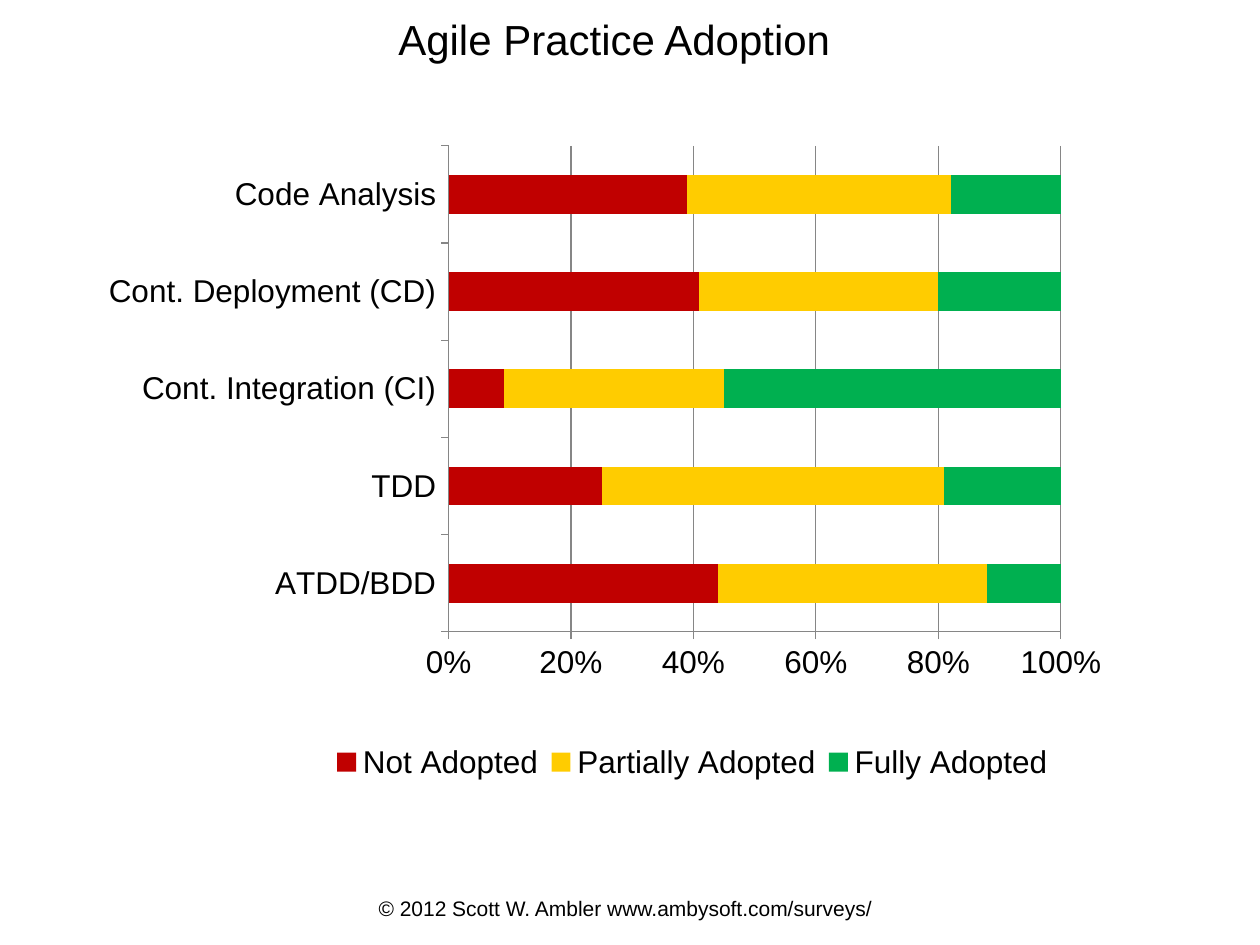
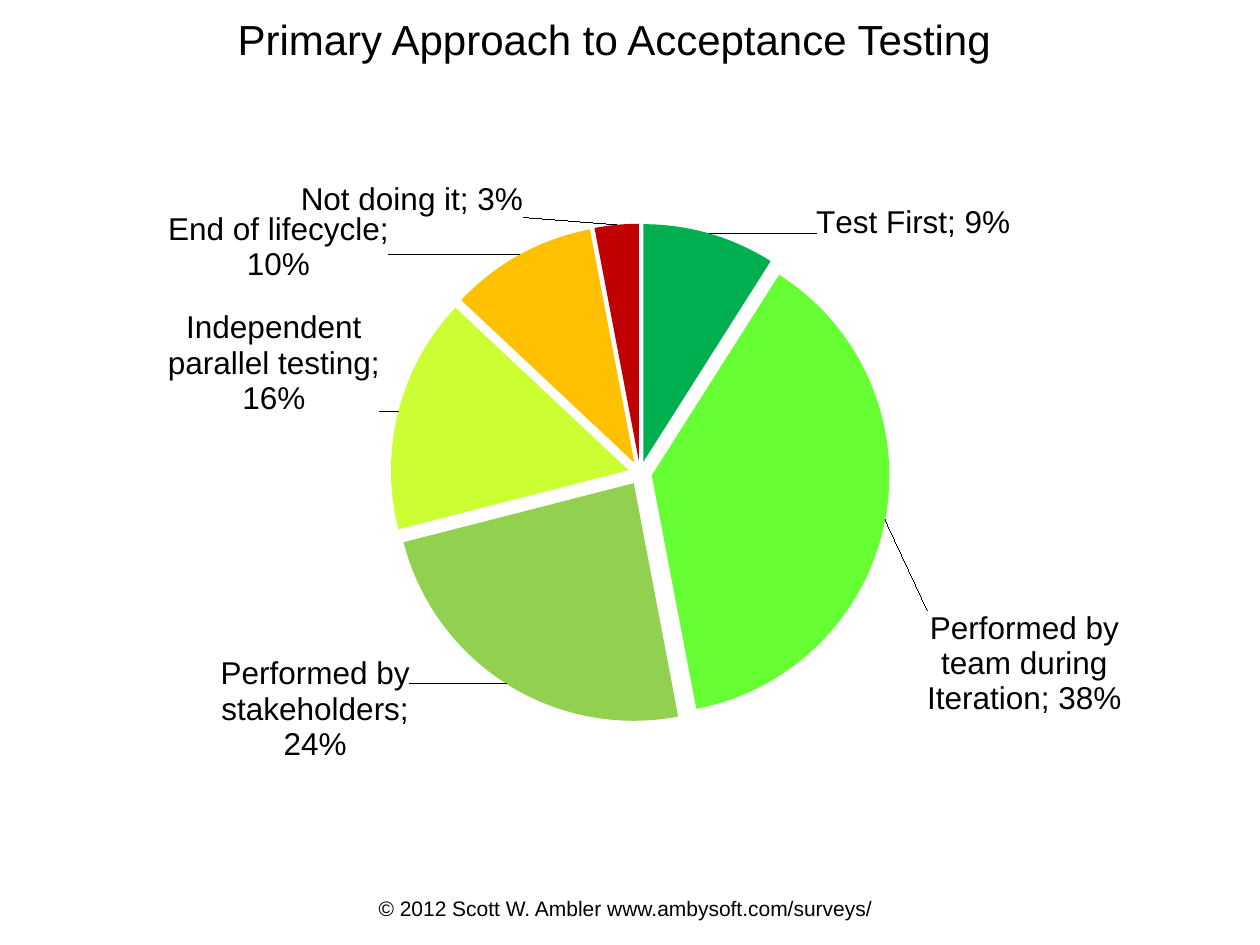
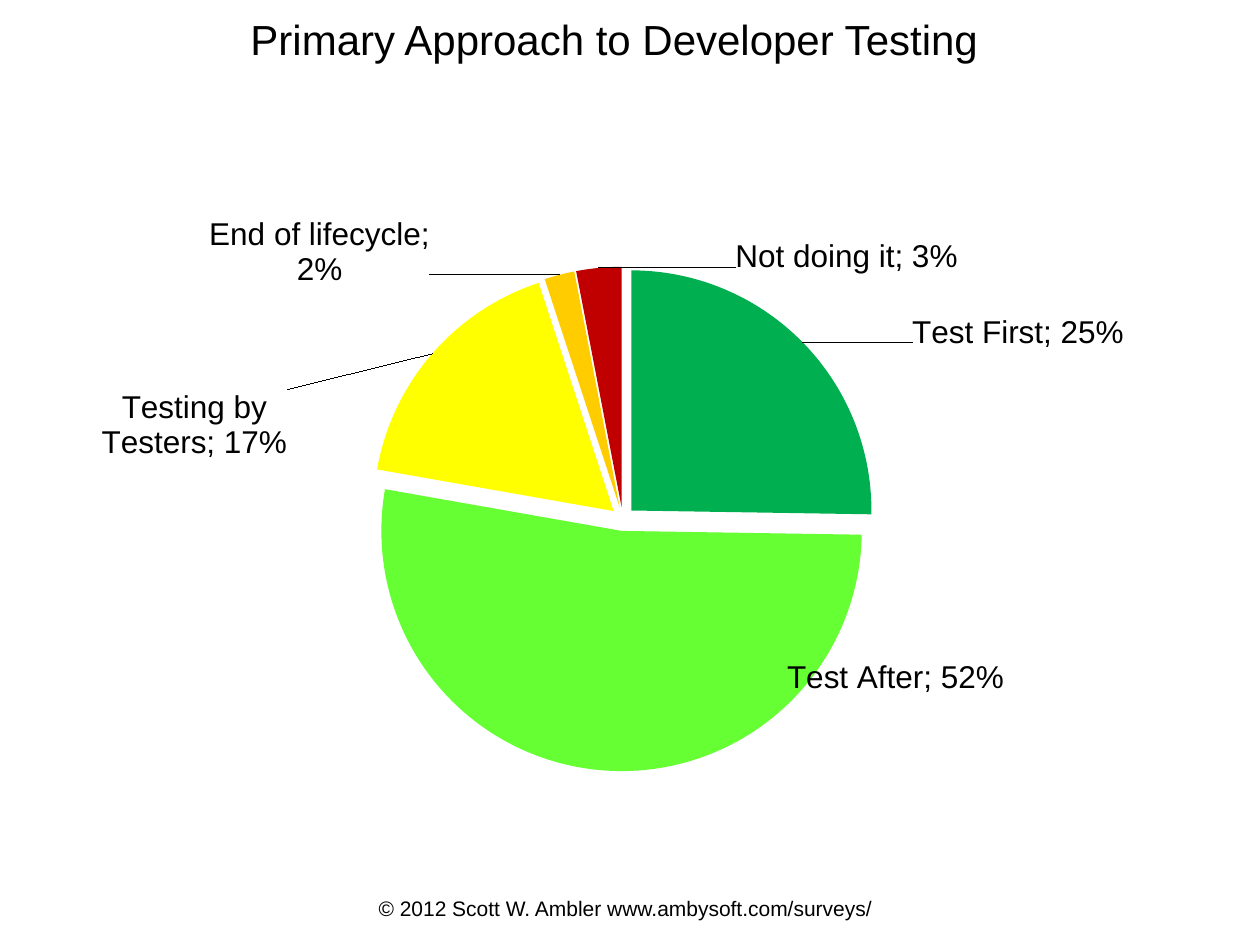
"""Build three slides of survey results on agile testing practices."""
from pptx import Presentation
from pptx.chart.data import CategoryChartData
from pptx.dml.color import RGBColor
from pptx.enum import chart as ch, text
from pptx.oxml import parse_xml
from pptx.oxml.ns import nsdecls, qn
from pptx.util import Inches, Pt

FONT = "Arial"
BLACK = RGBColor(0x00, 0x00, 0x00)
GRAY = RGBColor(0x86, 0x86, 0x86)
RED = RGBColor(0xC0, 0x00, 0x00)
AMBER = RGBColor(0xFF, 0xC0, 0x00)
GOLD = RGBColor(0xFF, 0xCC, 0x00)
YELLOW = RGBColor(0xFF, 0xFF, 0x00)
LEMON = RGBColor(0xCC, 0xFF, 0x33)
OLIVE = RGBColor(0x92, 0xD0, 0x50)
LIME = RGBColor(0x66, 0xFF, 0x33)
GREEN = RGBColor(0x00, 0xB0, 0x50)

FOOTER = "© 2012 Scott W. Ambler www.ambysoft.com/surveys/"
TITLE_AREA = (0.9, 0, 7.95, 0.61)
FOOTER_AREA = (1.38, 7.06, 7.17, 0.22)

ADOPTION = {
    "title": "Agile Practice Adoption",
    "area": (0.59, 0.99, 9, 5.59),
    "plot": (0.33, 0.03, 0.54, 0.69),
    "legend": (0.22, 0.86, 0.65, 0.09),
    "practices": ["ATDD/BDD", "TDD", "Cont. Integration (CI)",
                  "Cont. Deployment (CD)", "Code Analysis"],
    "levels": [
        ("Not Adopted", RED, (0.44, 0.25, 0.09, 0.41, 0.39)),
        ("Partially Adopted", GOLD, (0.44, 0.56, 0.36, 0.39, 0.43)),
        ("Fully Adopted", GREEN, (0.13, 0.19, 0.55, 0.21, 0.18)),
    ],
}

# Each slice: name, share, colour, label shift as a fraction of the chart.
APPROACHES = [
    {
        "title": "Primary Approach to Acceptance Testing",
        "area": (0.43, 1.15, 9.21, 5.43),
        "plot": (0.29, 0.11, 0.43, 0.74),
        "slices": [
            ("Test First", 0.09, GREEN, (0.09, 0.02)),
            ("Performed by team during Iteration", 0.38, LIME, (0.03, 0.13)),
            ("Performed by stakeholders", 0.24, OLIVE, (-0.08, -0.05)),
            ("Independent parallel testing", 0.16, LEMON, (-0.01, 0.01)),
            ("End of lifecycle", 0.1, AMBER, (-0.11, 0.05)),
            ("Not doing it", 0.03, RED, (-0.08, 0)),
        ],
    },
    {
        "title": "Primary Approach to Developer Testing",
        "area": (0.43, 1.39, 9.21, 5.2),
        "plot": (0.27, 0.14, 0.44, 0.77),
        "slices": [
            ("Test First", 0.25, GREEN, (0.09, 0.02)),
            ("Test After", 0.52, LIME, (0.35, -0.18)),
            ("Testing by Testers", 0.17, YELLOW, (-0.12, 0.17)),
            ("End of lifecycle", 0.02, GOLD, (-0.11, 0.03)),
            ("Not doing it", 0.03, RED, (0.31, 0.02)),
        ],
    },
]


def add_line(slide, words, area, size, anchor):
    box = slide.shapes.add_textbox(*map(Inches, area))
    frame = box.text_frame
    frame.word_wrap = True
    frame.vertical_anchor = anchor
    para = frame.paragraphs[0]
    para.text = words
    para.alignment = text.PP_ALIGN.CENTER
    para.font.name, para.font.size = FONT, Pt(size)
    para.font.color.rgb = BLACK


def add_page(deck, title):
    slide = deck.slides.add_slide(deck.slide_layouts[6])
    add_line(slide, title, TITLE_AREA, 24, text.MSO_ANCHOR.MIDDLE)
    add_line(slide, FOOTER, FOOTER_AREA, 12, text.MSO_ANCHOR.TOP)
    return slide


def place(part, index, area, target=""):
    """Give a chart part a fixed layout, in fractions of the chart."""
    for layout in part.findall(qn("c:layout")):
        part.remove(layout)
    modes = "".join(f'<c:{side}Mode val="edge"/>' for side in "xy")
    sizes = "".join(f'<c:{side} val="{value}"/>' for side, value in zip("xywh", area))
    part.insert(index, parse_xml(
        f'<c:layout {nsdecls("c")}><c:manualLayout>{target}{modes}{sizes}'
        '</c:manualLayout></c:layout>'))


def add_survey_chart(slide, kind, page, categories, series):
    data = CategoryChartData(number_format="0%")
    data.categories = categories
    for name, values in series:
        data.add_series(name, values)
    chart = slide.shapes.add_chart(kind, *map(Inches, page["area"]), data).chart
    chart.has_title = False
    chart.has_legend = False
    chart.font.name, chart.font.size = FONT, Pt(18)
    chart.font.color.rgb = BLACK
    place(next(chart.element.iter(qn("c:plotArea"))), 0, page["plot"],
          '<c:layoutTarget val="inner"/>')
    return chart


def fill(part, color):
    part.format.fill.solid()
    part.format.fill.fore_color.rgb = color


def add_adoption_bars(slide, page):
    levels = page["levels"]
    chart = add_survey_chart(slide, ch.XL_CHART_TYPE.BAR_STACKED, page, page["practices"],
                             [(name, values) for name, _, values in levels])
    plot = chart.plots[0]
    plot.gap_width, plot.overlap = 150, 100
    for series, (_, color, _) in zip(plot.series, levels):
        fill(series, color)
    scale = chart.value_axis
    scale.minimum_scale, scale.maximum_scale, scale.major_unit = 0, 1, 0.2
    scale.has_major_gridlines = True
    scale.tick_labels.number_format = "0%"
    scale.tick_labels.number_format_is_linked = False
    for axis in (scale, chart.category_axis):
        axis.major_tick_mark = ch.XL_TICK_MARK.OUTSIDE
    for line in (scale, chart.category_axis, scale.major_gridlines):
        line.format.line.color.rgb = GRAY
        line.format.line.width = Pt(0.75)
    chart.has_legend = True
    chart.legend.position = ch.XL_LEGEND_POSITION.RIGHT
    chart.legend.include_in_layout = False
    place(next(chart.element.iter(qn("c:legend"))), 1, page["legend"])


def slice_labels(shifts):
    show = ('<c:dLblPos val="bestFit"/><c:showLegendKey val="0"/><c:showVal val="1"/>'
            '<c:showCatName val="1"/><c:showSerName val="0"/><c:showPercent val="0"/>'
            '<c:showBubbleSize val="0"/><c:separator>; </c:separator>')
    style = '<c:numFmt formatCode="0%" sourceLinked="0"/><c:spPr><a:noFill/></c:spPr>'
    labels = "".join(
        f'<c:dLbl><c:idx val="{index}"/><c:layout><c:manualLayout><c:x val="{x}"/>'
        f'<c:y val="{y}"/></c:manualLayout></c:layout>{style}{show}</c:dLbl>'
        for index, (x, y) in enumerate(shifts))
    return parse_xml(f'<c:dLbls {nsdecls("c", "a")}>{labels}{style}{show}'
                     '<c:showLeaderLines val="1"/></c:dLbls>')


def add_approach_pie(slide, page):
    names, shares, colors, shifts = zip(*page["slices"])
    chart = add_survey_chart(slide, ch.XL_CHART_TYPE.PIE, page, names, [("Series 1", shares)])
    chart.plots[0].vary_by_categories = True
    series = chart.plots[0].series[0]
    for index, color in enumerate(colors):
        fill(series.points[index], color)
    ser = next(chart.element.iter(qn("c:ser")))
    ser.find(qn("c:dPt")).addprevious(parse_xml(f'<c:explosion {nsdecls("c")} val="5"/>'))
    ser.find(qn("c:cat")).addprevious(slice_labels(shifts))


def main():
    deck = Presentation()
    deck.slide_width, deck.slide_height = Inches(10), Inches(7.5)
    add_adoption_bars(add_page(deck, ADOPTION["title"]), ADOPTION)
    for page in APPROACHES:
        add_approach_pie(add_page(deck, page["title"]), page)
    deck.save("out.pptx")


if __name__ == "__main__":
    main()
